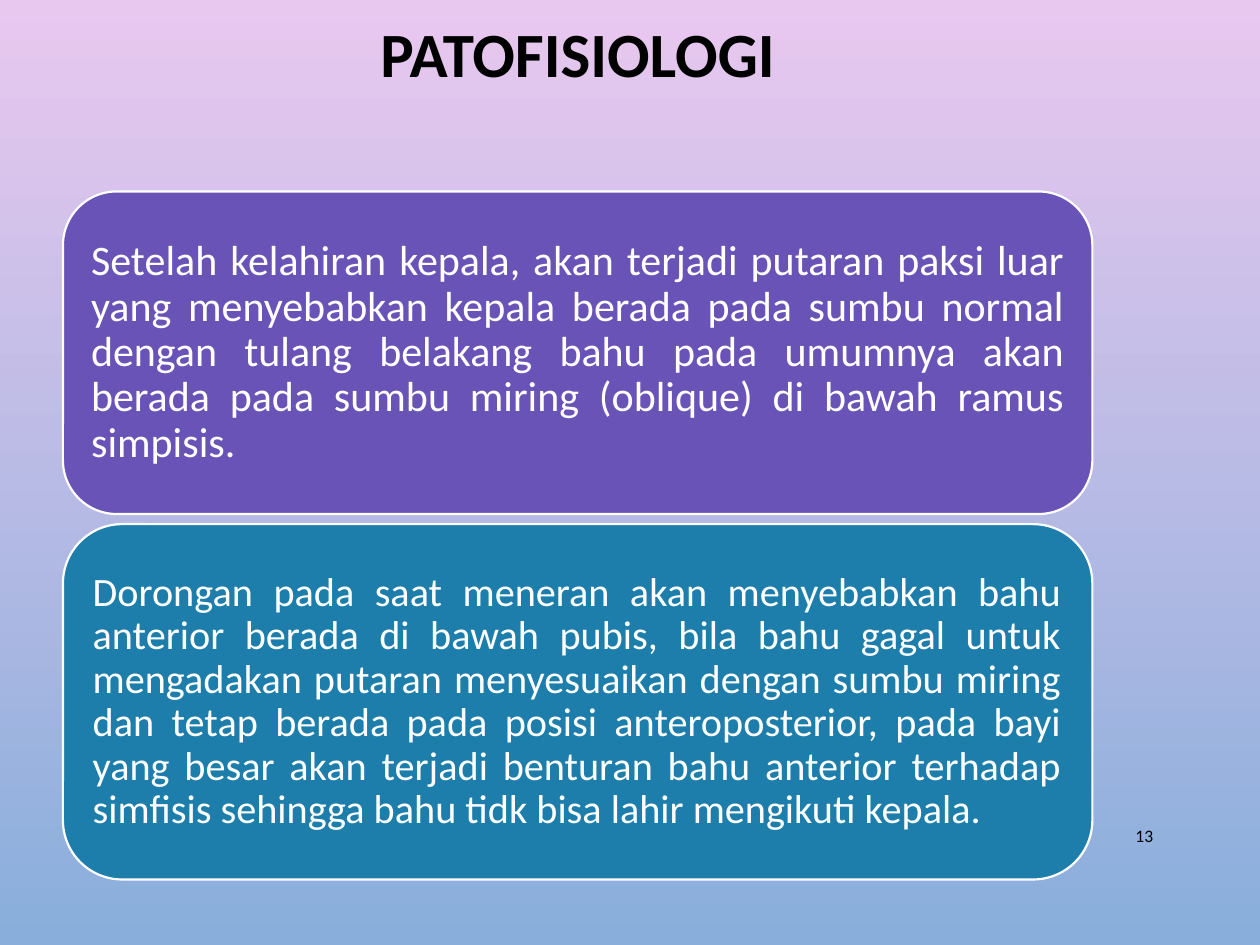
from collections import namedtuple
from dataclasses import dataclass

from pptx import Presentation
from pptx.dml import color as c
from pptx.enum import shapes, text
from pptx.util import Pt

Box = namedtuple("Box", "left top width height")


@dataclass(frozen=True)
class Theme:
    """Colours, typeface and type sizes of the deck."""
    font: str = "Calibri"
    sky_top: str = "E9C8EF"
    sky_bottom: str = "89AEDB"
    violet: str = "6953B7"
    teal: str = "1D7EAB"
    white: str = "FFFFFF"
    black: str = "000000"
    title: int = 36
    rotation: int = 24
    impaction: int = 23
    number: int = 10


THEME = Theme()
CARDS = [
    (109.44, 184.32, THEME.violet, THEME.rotation,
     "Setelah kelahiran kepala, akan terjadi putaran paksi luar yang menyebabkan kepala "
     "berada pada sumbu normal dengan tulang belakang bahu pada umumnya akan berada pada "
     "sumbu miring (oblique) di bawah ramus simpisis."),
    (299.52, 203.04, THEME.teal, THEME.impaction,
     "Dorongan pada saat meneran akan menyebabkan bahu anterior berada di bawah pubis, bila "
     "bahu gagal untuk mengadakan putaran menyesuaikan dengan sumbu miring dan tetap berada "
     "pada posisi anteroposterior, pada bayi yang besar akan terjadi benturan bahu anterior "
     "terhadap simfisis sehingga bahu tidk bisa lahir mengikuti kepala."),
]


def rgb(value):
    """Return a colour from its hex value."""
    return c.RGBColor.from_string(value)


def place(box):
    """Return the box as four point lengths."""
    return [Pt(length) for length in box]


def write(shape, wording, size, colour, align, spacing=1.0, bold=False):
    """Set one vertically centred paragraph in a shape."""
    frame = shape.text_frame
    frame.word_wrap = True
    frame.vertical_anchor = text.MSO_ANCHOR.MIDDLE
    para = frame.paragraphs[0]
    para.text = wording
    para.alignment = align
    para.line_spacing = spacing
    para.font.name = THEME.font
    para.font.size = Pt(size)
    para.font.bold = bold
    para.font.color.rgb = rgb(colour)
    return frame


def paint_background(page):
    """Fill the page with a gradient running from top to bottom."""
    fill = page.background.fill
    fill.gradient()
    fill.gradient_angle = 270
    for stop, colour in zip(fill.gradient_stops, (THEME.sky_top, THEME.sky_bottom)):
        stop.color.rgb = rgb(colour)


def add_title(page, box, wording):
    """Add the centred heading."""
    write(page.shapes.add_textbox(*place(box)), wording, THEME.title, THEME.black,
          text.PP_ALIGN.CENTER, 0.9, True)


def add_card(page, box, colour, size, wording):
    """Add a rounded card holding a justified paragraph."""
    card = page.shapes.add_shape(shapes.MSO_SHAPE.ROUNDED_RECTANGLE, *place(box))
    card.shadow.inherit = False
    card.fill.solid()
    card.fill.fore_color.rgb = rgb(colour)
    card.line.color.rgb = rgb(THEME.white)
    card.line.width = Pt(1.25)
    frame = write(card, wording, size, THEME.white, text.PP_ALIGN.JUSTIFY, 0.9)
    frame.margin_left = frame.margin_right = Pt(7.2)
    frame.margin_top = frame.margin_bottom = Pt(7.2)


def add_page_number(page, box, number):
    """Add the right-aligned page number."""
    write(page.shapes.add_textbox(*place(box)), number, THEME.number, THEME.black,
          text.PP_ALIGN.RIGHT)


def main():
    """Build and save the deck."""
    deck = Presentation()
    deck.slide_width, deck.slide_height = Pt(720), Pt(540)
    page = deck.slides.add_slide(deck.slide_layouts[6])
    column = Box(36, -12.24, 588.24, 90)
    paint_background(page)
    add_title(page, column, "PATOFISIOLOGI")
    for top, height, colour, size, wording in CARDS:
        add_card(page, column._replace(top=top, height=height), colour, size, wording)
    add_page_number(page, Box(620.64, 462.96, 45.36, 28.8), "13")
    deck.save("out.pptx")


if __name__ == "__main__":
    main()
